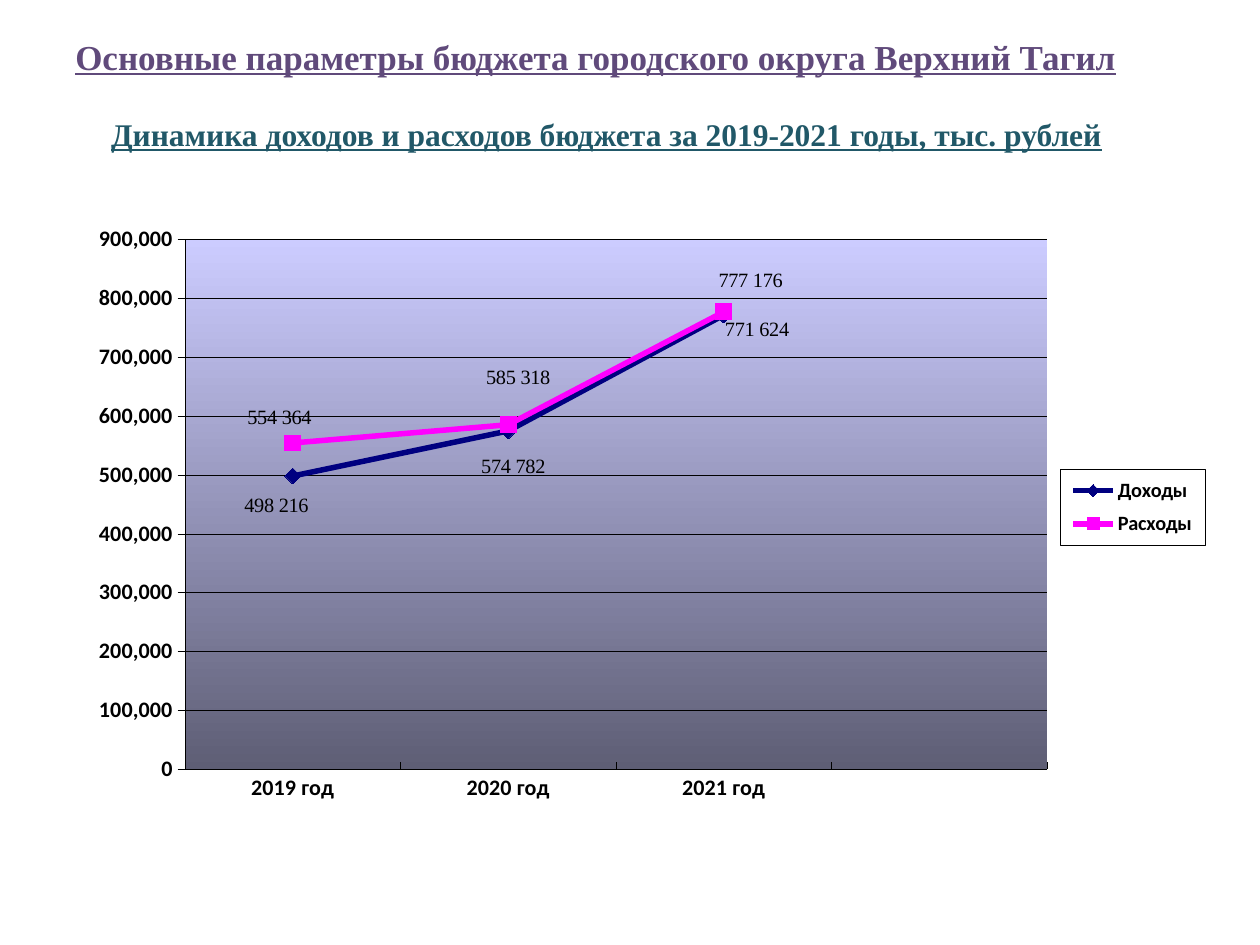
import pptx
import pptx.chart.data
import pptx.enum.chart
import pptx.enum.text
import pptx.oxml
import pptx.oxml.ns
import pptx.util
from pptx.dml.color import RGBColor

Cm, Pt = pptx.util.Cm, pptx.util.Pt
qn = pptx.oxml.ns.qn
enum = pptx.enum.chart

# Content
TITLE = "Основные параметры бюджета городского округа Верхний Тагил"
SUB = "Динамика доходов и расходов бюджета за 2019-2021 годы, тыс. рублей"
YEARS = ["2019 год", "2020 год", "2021 год", ""]
# nudge: label shift from its usual place, in cm
SERIES = [
    dict(name="Доходы", vals=[498216, 574782, 771624, None], color="000080",
         mark="DIAMOND", side="BELOW",
         nudge=[(-0.33, 0.14), (0.1, 0.26), (0.67, -0.17)]),
    dict(name="Расходы", vals=[554364, 585318, 777176, None], color="FF00FF",
         mark="SQUARE", side="ABOVE",
         nudge=[(-0.27, -0.03), (0.2, -0.48), (0.54, -0.16)]),
]

THEME = dict(
    serif="Times New Roman", sans="Calibri",
    title="604A7B", sub="215868", ink="000000", paper="FFFFFF",
    top="CCCCFF", base="5E5E75",
    big=20, mid=18, axis=12.6, small=11.6, thin=0.25, thick=3.16, mark=9,
)
# Chart size, then plot and legend boxes inside it, in cm
WIDE, HIGH = 22.81, 12.9
PLOT = (2.14, 0.66, 17.38, 10.68)
KEY = (19.78, 5.29, 2.92, 1.53)
FORM = '000" "000'


def style(font, face, size, color, bold=True):
    font.name, font.size, font.bold = face, Pt(size), bold
    font.color.rgb = RGBColor.from_string(color)


def stroke(line, color, width):
    line.color.rgb = RGBColor.from_string(color)
    line.width = Pt(width)


def head(shape, text, size, color, align):
    frame = shape.text_frame
    frame.word_wrap = True
    frame.auto_size = pptx.enum.text.MSO_AUTO_SIZE.NONE
    frame.vertical_anchor = pptx.enum.text.MSO_ANCHOR.TOP
    frame.text = text
    para = frame.paragraphs[0]
    para.alignment = align
    style(para.font, THEME["serif"], size, color)
    para.font.underline = True


def xml(tag, body="", attrs=""):
    return pptx.oxml.parse_xml(
        f"<c:{tag} {pptx.oxml.ns.nsdecls('c', 'a')} {attrs}>{body}</c:{tag}>")


def layout(box, inner=False):
    parts = [("layoutTarget", "inner")] if inner else []
    if len(box) == 4:
        parts += [("xMode", "edge"), ("yMode", "edge")]
    parts += [(tag, round(num / full, 4))
              for tag, num, full in zip("xywh", box, (WIDE, HIGH) * 2)]
    body = "".join(f'<c:{tag} val="{num}"/>' for tag, num in parts)
    return xml("layout", f"<c:manualLayout>{body}</c:manualLayout>")


def label(line, row):
    tags = line.data_labels
    tags.show_value = True
    tags.number_format, tags.number_format_is_linked = FORM, False
    style(tags.font, THEME["serif"], THEME["small"], THEME["ink"], False)
    side = tags.position = enum.XL_LABEL_POSITION[row["side"]]
    for lead in tags._element.findall(qn("c:showLeaderLines")):
        lead.set("val", "0")
    for i, nudge in enumerate(row["nudge"]):
        tag = line.points[i].data_label
        style(tag.font, THEME["serif"], THEME["small"], THEME["ink"], False)
        tag.position = side
    for item, nudge in zip(tags._element.findall(qn("c:dLbl")), row["nudge"]):
        item.insert(1, layout(nudge))
        item.find(qn("c:txPr")).addprevious(
            xml("numFmt", attrs=f"formatCode='{FORM}' sourceLinked='0'"))


deck = pptx.Presentation()
deck.slide_width, deck.slide_height = Cm(25.4), Cm(19.05)
slide = deck.slides.add_slide(deck.slide_layouts[5])

# Headings
align = pptx.enum.text.PP_ALIGN
title = slide.shapes.title
title.left, title.top, title.width, title.height = (
    Cm(1.19), Cm(0.58), Cm(21.64), Cm(1.12))
head(title, TITLE, THEME["big"], THEME["title"], align.CENTER)
sub = slide.shapes.add_textbox(Cm(1.99), Cm(2.2), Cm(20.65), Cm(1.1))
head(sub, SUB, THEME["mid"], THEME["sub"], align.LEFT)

# Chart
data = pptx.chart.data.CategoryChartData(number_format="#,##0")
data.categories = YEARS
for row in SERIES:
    data.add_series(row["name"], row["vals"])
chart = slide.shapes.add_chart(
    enum.XL_CHART_TYPE.LINE_MARKERS, Cm(1.59), Cm(4.17), Cm(WIDE), Cm(HIGH),
    data).chart
chart.has_title = False
style(chart.font, THEME["sans"], THEME["axis"], THEME["ink"])

# Axes
tick = enum.XL_TICK_MARK
cat, val = chart.category_axis, chart.value_axis
for axis, mark in ((cat, tick.INSIDE), (val, tick.CROSS)):
    axis.major_tick_mark, axis.minor_tick_mark = mark, tick.NONE
    style(axis.tick_labels.font, THEME["sans"], THEME["axis"], THEME["ink"])
    stroke(axis.format.line, THEME["ink"], THEME["thin"])
val.minimum_scale, val.maximum_scale, val.major_unit = 0, 900000, 100000
val.tick_labels.number_format = "#,##0"
val.tick_labels.number_format_is_linked = False
stroke(val.major_gridlines.format.line, THEME["ink"], THEME["thin"])

# Lines, markers and labels
chart.plots[0].vary_by_categories = False
for line, row in zip(chart.plots[0].series, SERIES):
    line.smooth = False
    stroke(line.format.line, row["color"], THEME["thick"])
    line.marker.style = enum.XL_MARKER_STYLE[row["mark"]]
    line.marker.size = THEME["mark"]
    line.marker.format.fill.solid()
    line.marker.format.fill.fore_color.rgb = RGBColor.from_string(row["color"])
    stroke(line.marker.format.line, row["color"], THEME["thin"])
    label(line, row)

# Plot area: place and gradient
area = chart._chartSpace.chart.plotArea
for old in area.findall(qn("c:layout")):
    area.remove(old)
area.insert(0, layout(PLOT, inner=True))
stops = "".join(
    f'<a:gs pos="{pos}"><a:srgbClr val="{THEME[name]}"/></a:gs>'
    for pos, name in ((0, "top"), (100000, "base")))
area.append(xml("spPr", f'<a:gradFill><a:gsLst>{stops}</a:gsLst>'
                '<a:lin ang="5400000" scaled="0"/></a:gradFill>'
                '<a:ln><a:noFill/></a:ln>'))

# Legend: place, white fill and thin frame
chart.has_legend = True
key = chart.legend
key.position = enum.XL_LEGEND_POSITION.RIGHT
key.include_in_layout = False
style(key.font, THEME["sans"], THEME["small"], THEME["ink"])
node = key._element
for old in node.findall(qn("c:layout")):
    node.remove(old)
node.find(qn("c:legendPos")).addnext(layout(KEY))
fill = '<a:solidFill><a:srgbClr val="{}"/></a:solidFill>'
node.find(qn("c:txPr")).addprevious(
    xml("spPr", fill.format(THEME["paper"])
        + f'<a:ln w="{Pt(THEME["thin"])}">{fill.format(THEME["ink"])}</a:ln>'))

deck.save("out.pptx")
